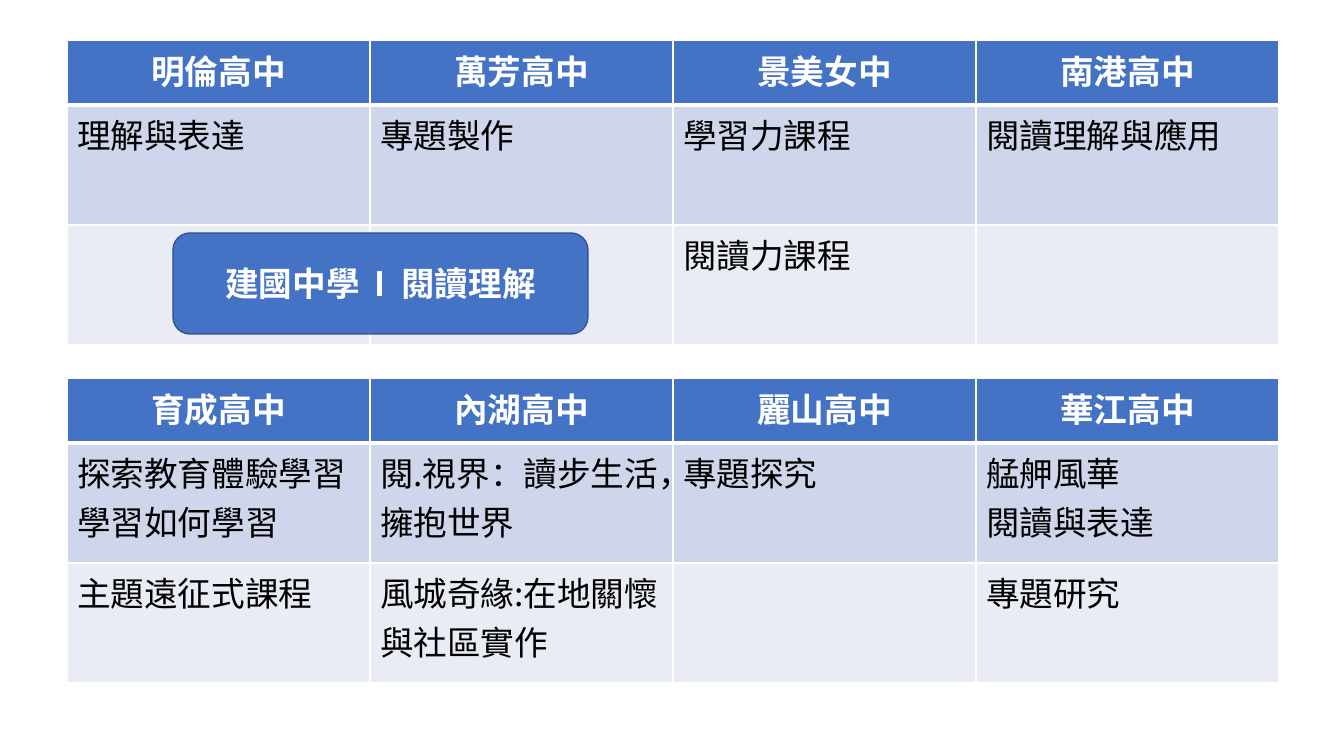
from lxml.etree import SubElement
from pptx import Presentation
from pptx.dml.color import RGBColor
from pptx.enum.shapes import MSO_SHAPE
from pptx.enum.text import MSO_ANCHOR, PP_ALIGN
from pptx.oxml import parse_xml
from pptx.oxml.ns import nsdecls, qn
from pptx.util import Emu, Pt

SCHOOL_COURSES = [
    [
        ["明倫高中", "萬芳高中", "景美女中", "南港高中"],
        ["理解與表達", "專題製作", "學習力課程", "閱讀理解與應用"],
        ["", "", "閱讀力課程", ""],
    ],
    [
        ["育成高中", "內湖高中", "麗山高中", "華江高中"],
        ["探索教育體驗學習\n學習如何學習", "閱.視界：讀步生活，擁抱世界", "專題探究", "艋舺風華\n閱讀與表達"],
        ["主題遠征式課程", "風城奇緣:在地關懷與社區實作", "", "專題研究"],
    ],
]
JIANGUO = "建國中學  I  閱讀理解"

COLORS = {
    "header": "4472C4",
    "first": "CFD5EA",
    "second": "E9EBF5",
    "grid": "FFFFFF",
    "outline": "325491",
    "light": "FFFFFF",
    "dark": "000000",
}
ROW_FILLS = ["header", "first", "second"]
ROW_HEIGHTS = [65, 120, 120]
COLUMN_WIDTH = 303
LEFT, TOP, TABLE_PITCH = 67, 40, 338
JIANGUO_BOX = (173, 233, 415, 101)
FONT = "Noto Sans CJK SC"
HEADING = {"size": Pt(24), "name": FONT, "bold": True}
COURSE = {**HEADING, "bold": False}


def px(length):
    return Emu(round(length * 914400 / 100.8))


def rgb(key):
    return RGBColor.from_string(COLORS[key])


def write(frame, wording, style, color, align):
    frame.text = wording
    for paragraph in frame.paragraphs:
        paragraph.alignment = align
        for run in paragraph.runs:
            for attribute, setting in style.items():
                setattr(run.font, attribute, setting)
            run.font.color.rgb = rgb(color)
            SubElement(run.font._element, qn("a:ea"), typeface=FONT)


def draw_borders(cell, widths):
    properties = cell._tc.get_or_add_tcPr()
    for position, (side, width) in enumerate(widths.items()):
        properties.insert(position, parse_xml(
            f'<a:ln{side} {nsdecls("a")} w="{Pt(width)}"><a:solidFill>'
            f'<a:srgbClr val="{COLORS["grid"]}"/></a:solidFill></a:ln{side}>'))


def add_courses(slide, courses, top):
    columns = len(courses[0])
    table = slide.shapes.add_table(
        len(courses), columns, px(LEFT), px(top),
        px(COLUMN_WIDTH * columns), px(sum(ROW_HEIGHTS))).table
    for column in table.columns:
        column.width = px(COLUMN_WIDTH)
    for level, entries in enumerate(courses):
        table.rows[level].height = px(ROW_HEIGHTS[level])
        heading = level == 0
        for number, entry in enumerate(entries):
            cell = table.cell(level, number)
            cell.fill.solid()
            cell.fill.fore_color.rgb = rgb(ROW_FILLS[level])
            draw_borders(cell, {"L": 1, "R": 1, "T": 3 if level == 1 else 1, "B": 3 if heading else 1})
            write(cell.text_frame, entry, HEADING if heading else COURSE,
                  "light" if heading else "dark",
                  PP_ALIGN.CENTER if heading else PP_ALIGN.LEFT)


def add_jianguo(slide):
    box = slide.shapes.add_shape(MSO_SHAPE.ROUNDED_RECTANGLE, *map(px, JIANGUO_BOX))
    box.shadow.inherit = False
    box.fill.solid()
    box.fill.fore_color.rgb = rgb("header")
    box.line.color.rgb = rgb("outline")
    box.line.width = Pt(1)
    box.text_frame.word_wrap = True
    box.text_frame.vertical_anchor = MSO_ANCHOR.MIDDLE
    write(box.text_frame, JIANGUO, HEADING, "light", PP_ALIGN.CENTER)


def main():
    deck = Presentation()
    deck.slide_width, deck.slide_height = px(1344), px(756)
    slide = deck.slides.add_slide(deck.slide_layouts[6])
    for order, courses in enumerate(SCHOOL_COURSES):
        add_courses(slide, courses, TOP + order * TABLE_PITCH)
    add_jianguo(slide)
    deck.save("out.pptx")


if __name__ == "__main__":
    main()
